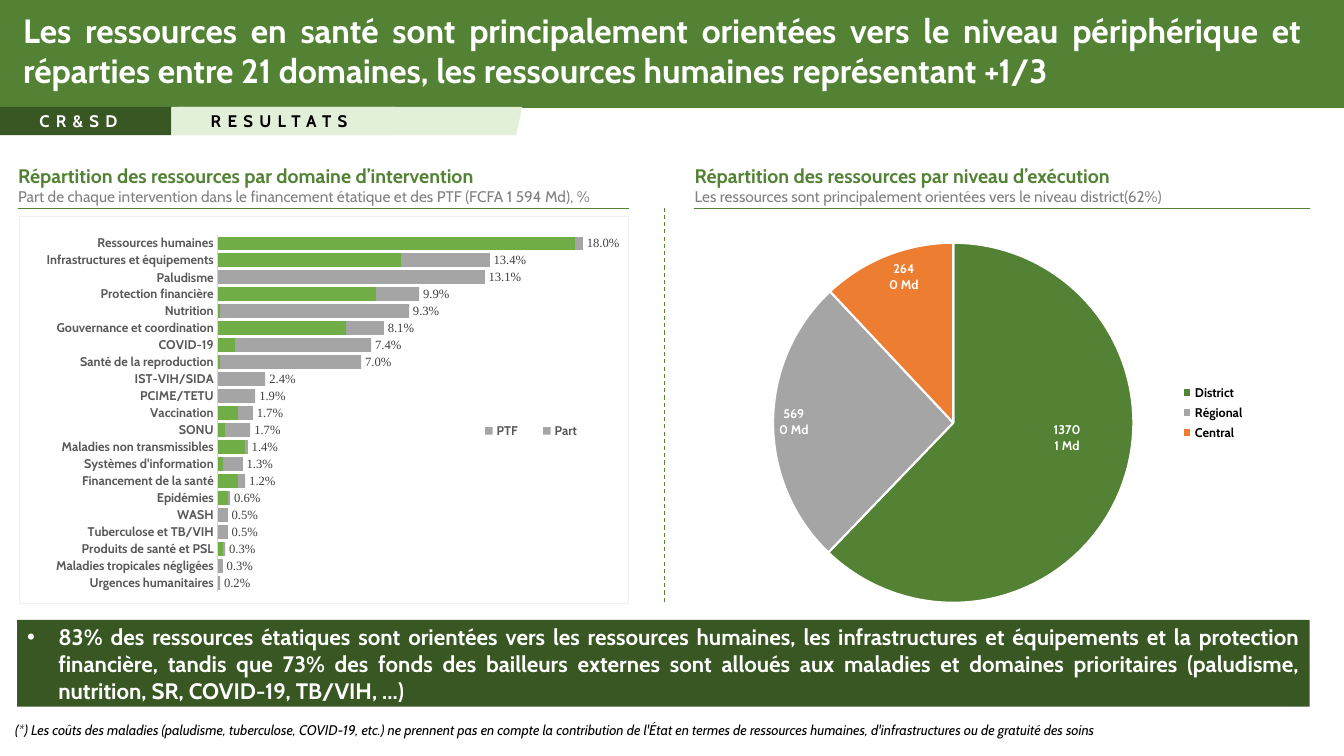
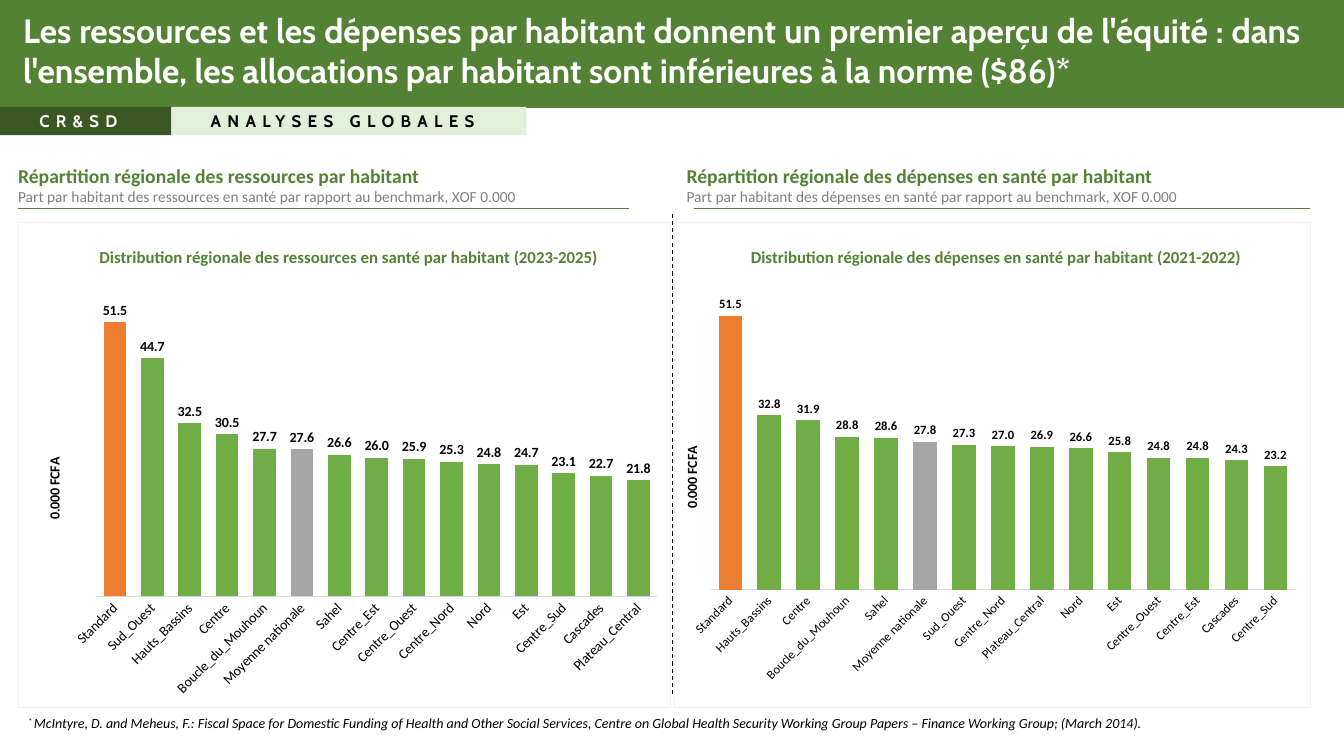
"""Build two slides on the distribution of health resources."""
from copy import deepcopy

from pptx import Presentation, util as u
from pptx.chart.data import CategoryChartData
from pptx.dml.color import RGBColor
from pptx.enum import chart as ch, dml, shapes, text
from pptx.oxml import parse_xml
from pptx.oxml.ns import nsdecls, qn
from pptx.oxml.xmlchemy import OxmlElement

W, H = 13.33, 7.5
LEFT, RIGHT = 0.18, 12.99
RULE_Y, HEAD_Y, TAB_Y, TAB_H = 2.07, 1.62, 1.06, 0.28
COLUMNS = ((LEFT, 6.24), (6.88, RIGHT))
MD = 10 ** 9
C = dict(green="548235", dark="385723", pale="E2F0D9", leaf="70AD47", grey="A5A5A5",
         mean="A6A6A6", orange="ED7D31", muted="808080", label="595959", value="404040",
         axis="D9D9D9", border="F2F2F2", white="FFFFFF", black="000000")

DOMAINS = [
    ("Ressources humaines", 142, 3, 0.18), ("Infrastructures et équipements", 73, 35, 0.134),
    ("Paludisme", 0, 106, 0.131), ("Protection financière", 63, 17, 0.099),
    ("Nutrition", 1, 75, 0.093), ("Gouvernance et coordination", 51, 15, 0.081),
    ("COVID-19", 7, 54, 0.074), ("Santé de la reproduction", 1, 56, 0.07),
    ("IST-VIH/SIDA", 0, 19, 0.024), ("PCIME/TETU", 0, 15, 0.019),
    ("Vaccination", 8, 6, 0.017), ("SONU", 3, 10, 0.017),
    ("Maladies non transmissibles", 11, 1, 0.014), ("Systèmes d'information", 2, 8, 0.013),
    ("Financement de la santé", 8, 3, 0.012), ("Epidémies", 4, 1, 0.006),
    ("WASH", None, 4, 0.005), ("Tuberculose et TB/VIH", 0, 4, 0.005),
    ("Produits de santé et PSL", 2, 1, 0.003),
    ("Maladies tropicales négligées", None, 2, 0.003), ("Urgences humanitaires", None, 1, 0.002)]
RESOURCES = {
    "Standard": 51.5, "Sud_Ouest": 44.7, "Hauts_Bassins": 32.5, "Centre": 30.5,
    "Boucle_du_Mouhoun": 27.7, "Moyenne nationale": 27.6, "Sahel": 26.6, "Centre_Est": 26,
    "Centre_Ouest": 25.9, "Centre_Nord": 25.3, "Nord": 24.8, "Est": 24.7, "Centre_Sud": 23.1,
    "Cascades": 22.7, "Plateau_Central": 21.8}
SPENDING = {
    "Standard": 51.5, "Hauts_Bassins": 32.8, "Centre": 31.9, "Boucle_du_Mouhoun": 28.8,
    "Sahel": 28.6, "Moyenne nationale": 27.8, "Sud_Ouest": 27.3, "Centre_Nord": 27,
    "Plateau_Central": 26.9, "Nord": 26.6, "Est": 25.8, "Centre_Ouest": 24.8,
    "Centre_Est": 24.8, "Cascades": 24.3, "Centre_Sud": 23.2}


def inches(*values):
    return [u.Inches(v) for v in values]


def rgb(name):
    return RGBColor.from_string(C[name])


def style(font, size, color="black", name="Cabin", **fmt):
    font.color.rgb = rgb(color)
    for key, value in dict(size=u.Pt(size), name=name, **fmt).items():
        setattr(font, key, value)


def paint(shape, fill):
    shape.shadow.inherit = False
    shape.fill.solid()
    shape.fill.fore_color.rgb = rgb(fill)
    shape.line.fill.background()


def rect(s, x, y, w, h, fill):
    shape = s.shapes.add_shape(shapes.MSO_SHAPE.RECTANGLE, *inches(x, y, w, h))
    paint(shape, fill)
    return shape


def frame(shape, anchor="MIDDLE", margins=(0.1, 0.05, 0.1, 0.05), wrap=True):
    tf = shape.text_frame
    sides = dict(zip(("left", "top", "right", "bottom"), inches(*margins)))
    fmt = {f"margin_{side}": value for side, value in sides.items()}
    fmt.update(word_wrap=wrap, auto_size=text.MSO_AUTO_SIZE.NONE,
               vertical_anchor=text.MSO_ANCHOR[anchor])
    for key, value in fmt.items():
        setattr(tf, key, value)
    return tf


def write(p, words, align="LEFT", **fmt):
    p.alignment = text.PP_ALIGN[align]
    r = p.add_run()
    r.text = words
    style(r.font, **fmt)
    return r


def line(s, x1, y1, x2, y2, color="green", dash=False):
    c = s.shapes.add_connector(shapes.MSO_CONNECTOR.STRAIGHT, *inches(x1, y1, x2, y2))
    c.line.color.rgb = rgb(color)
    c.line.width = u.Pt(0.75)
    if dash:
        c.line.dash_style = dml.MSO_LINE.DASH
    c._element.spPr.append(OxmlElement("a:effectLst"))


def tab(s, x, w, fill, words, color):
    tf = frame(rect(s, x, TAB_Y, w, TAB_H, fill), margins=(0.39, 0.04, 0.39, 0.04), wrap=False)
    r = write(tf.paragraphs[0], words, size=12, color=color, bold=True)
    r._r.get_or_add_rPr().set("spc", "450")


def ribbon(s):
    pts = [(5.18, TAB_Y), (5.12, TAB_Y + TAB_H), (1.7, TAB_Y + TAB_H), (1.76, TAB_Y)]
    pts = [inches(*pt) for pt in pts]
    fb = s.shapes.build_freeform(*pts[0])
    fb.add_line_segments(pts[1:])
    paint(fb.convert_to_shape(), "pale")


def add_band(s):
    band = rect(s, 0, 0, W, 1.07, "green")._element
    band.nvSpPr.cNvPr.set("id", "20")
    s.slide_layout.shapes._spTree.insert(2, band)


def add_slide(prs, title, section, section_w):
    s = prs.slides.add_slide(prs.slide_layouts[5])
    t = s.shapes.title
    t.left, t.top, t.width, t.height = inches(0.13, 0.16, 12.87, 0.67)
    write(frame(t).paragraphs[0], title, align="JUSTIFY", size=24, color="white", bold=True)
    tab(s, 0, 1.7, "dark", "CR&SD", "white")
    if section_w < 3:
        ribbon(s)
    tab(s, 1.7, section_w, "pale", section, "black")
    for x1, x2 in COLUMNS:
        line(s, x1, RULE_Y, x2, RULE_Y)
    return s


def heading(s, x, title, subtitle, font="Cabin"):
    box = s.shapes.add_textbox(*inches(x, HEAD_Y, 6.2, 0.44))
    tf = frame(box, "BOTTOM", (0, 0, 0, 0.02))
    write(tf.paragraphs[0], title, size=14, color="green", name=font, bold=True)
    write(tf.add_paragraph(), subtitle, size=11, color="muted", name=font)


def place(element, x, y, w=None, h=None):
    """Give a chart part a manual layout, as shares of the chart."""
    inner = element.tag == qn("c:plotArea")
    edge = "".join(f'<c:{k}Mode val="edge"/>' for k in "xy")
    size = "".join(f'<c:{k} val="{v}"/>' for k, v in zip("xywh", (x, y, w, h)) if v is not None)
    target = '<c:layoutTarget val="inner"/>' if inner else ""
    new = parse_xml(f'<c:layout {nsdecls("c")}><c:manualLayout>{target}{edge}{size}'
                    '</c:manualLayout></c:layout>')
    old = element.find(qn("c:layout"))
    overlay = element.find(qn("c:overlay"))
    if old is not None:
        element.replace(old, new)
    elif overlay is not None:
        overlay.addprevious(new)
    else:
        element.insert(0, new)


def add_chart(s, kind, at, cats, series, plot, font, size, border=True):
    data = CategoryChartData()
    data.categories = cats
    for name, values in series:
        data.add_series(name, values)
    chart = s.shapes.add_chart(ch.XL_CHART_TYPE[kind], *inches(*at), data).chart
    chart.has_title = chart.has_legend = False
    style(chart.font, size, name=font)
    edge = (f'<a:ln w="9525"><a:solidFill><a:srgbClr val="{C["border"]}"/></a:solidFill></a:ln>'
            if border else "<a:ln><a:noFill/></a:ln>")
    chart._chartSpace.find(qn("c:txPr")).addprevious(parse_xml(
        f'<c:spPr {nsdecls("c", "a")}><a:solidFill><a:srgbClr val="{C["white"]}"/></a:solidFill>'
        f'{edge}</c:spPr>'))
    place(chart._chartSpace.chart.plotArea, *plot)
    return chart


def fill_format(fmt, color):
    fmt.fill.solid()
    fmt.fill.fore_color.rgb = rgb(color)


def add_labels(series, position, number_format, **fmt):
    labels = series.data_labels
    values = dict(show_value=True, position=ch.XL_LABEL_POSITION[position],
                  number_format=number_format, number_format_is_linked=False)
    for key, value in values.items():
        setattr(labels, key, value)
    style(labels.font, **fmt)
    return labels


def add_legend(chart, position, at, color):
    chart.has_legend = True
    chart.legend.position = ch.XL_LEGEND_POSITION[position]
    chart.legend.include_in_layout = False
    style(chart.legend.font, 9, color, bold=True)
    place(chart.legend._element, *at)


def set_axes(chart, maximum, gap, overlap, **fmt):
    plot, cat, val = chart.plots[0], chart.category_axis, chart.value_axis
    plot.gap_width, plot.overlap, plot.vary_by_categories = gap, overlap, False
    cat.major_tick_mark = ch.XL_TICK_MARK.NONE
    cat.format.line.color.rgb = rgb("axis")
    cat.format.line.width = u.Pt(0.75)
    style(cat.tick_labels.font, **fmt)
    val.minimum_scale, val.maximum_scale = 0, maximum
    val.has_major_gridlines = val.visible = False


def domain_chart(s):
    cats, state, donors, share = zip(*reversed(DOMAINS))
    series = [(name, [None if v is None else v * MD for v in values])
              for name, values in (("Etat", state), ("PTF", donors))] + [("Part", share)]
    chart = add_chart(s, "BAR_STACKED", (0.19, 2.14, 6.05, 3.85), cats, series,
                      (0.325, 0.048, 0.662, 0.922), "Times New Roman", 9)
    set_axes(chart, 160 * MD, 26, 100, size=9, color="label", bold=True)
    for ser, color in zip(chart.series, ("leaf", "grey", "grey")):
        fill_format(ser.format, color)
    add_labels(chart.series[2], "INSIDE_BASE", "0.0%", size=9, color="value",
               name="Times New Roman")
    add_legend(chart, "BOTTOM", (0.73, 0.525, 0.22, 0.06), "label")
    chart.legend._element.insert(1, parse_xml(
        f'<c:legendEntry {nsdecls("c")}><c:idx val="2"/><c:delete val="1"/></c:legendEntry>'))


def level_chart(s):
    chart = add_chart(s, "PIE", (6.89, 2.24, 5.68, 3.75), ("District", "Régional", "Central"),
                      [("Ressources", (1370, 569, 264))], (0.117, 0.045, 0.669, 0.953),
                      "Cabin", 9, border=False)
    series = chart.series[0] if hasattr(chart, "series") else chart.plots[0].series[0]
    for i, color in enumerate(("green", "grey", "orange")):
        fmt = series.points[i].format
        fill_format(fmt, color)
        fmt.line.color.rgb = rgb("white")
        fmt.line.width = u.Pt(1.5)
    labels = add_labels(series, "INSIDE_END", '0" Md"', size=9, color="white", bold=True)
    labels.show_percentage = True
    group = labels._element
    separator = OxmlElement("c:separator")
    separator.text = "\n"
    group.find(qn("c:showBubbleSize")).addnext(separator)
    district = parse_xml(
        f'<c:dLbl {nsdecls("c")}><c:idx val="0"/><c:layout><c:manualLayout><c:x val="-0.06"/>'
        '<c:y val="-0.09"/></c:manualLayout></c:layout></c:dLbl>')
    for child in group:
        if child.tag != qn("c:showLeaderLines"):
            district.append(deepcopy(child))
    group.insert(0, district)
    add_legend(chart, "RIGHT", (0.84, 0.41, 0.13, 0.17), "black")


def region_chart(s, x, w, data, title, size, plot, title_x, unit_at):
    chart = add_chart(s, "COLUMN_CLUSTERED", (x, 2.2, w, 4.82), list(data),
                      [("FCFA", list(data.values()))], plot, "Calibri", 10)
    set_axes(chart, 60, 65, -27, size=size, name="Calibri")
    chart.category_axis.tick_labels.font._element.getparent().getparent().getparent().find(
        qn("a:bodyPr")).set("rot", "-2700000")
    series = chart.plots[0].series[0]
    fill_format(series.format, "leaf")
    for name, color in (("Standard", "orange"), ("Moyenne nationale", "mean")):
        fill_format(series.points[list(data).index(name)].format, color)
    add_labels(series, "OUTSIDE_END", "0.0", size=size, name="Calibri", bold=True)
    chart.has_title = chart.value_axis.has_title = True
    for part, words, at, pt, color in (
            (chart.chart_title, title, (title_x, 0.043), 12, "green"),
            (chart.value_axis.axis_title, "0.000 FCFA", unit_at, 10, "black")):
        write(part.text_frame.paragraphs[0], words, "CENTER", size=pt, color=color,
              name="Calibri", bold=True)
        place(part._element, *at)
    body = chart.value_axis.axis_title.text_frame._txBody.find(qn("a:bodyPr"))
    body.set("rot", "-5400000")
    body.set("vert", "horz")


def key_message(s, words):
    p = frame(rect(s, 0.17, 6.15, 12.82, 0.86, "dark")).paragraphs[0]
    pPr = p._p.get_or_add_pPr()
    pPr.set("marL", str(u.Inches(0.31)))
    pPr.set("indent", str(-u.Inches(0.31)))
    pPr.append(parse_xml(f'<a:buFont {nsdecls("a")} typeface="Arial"/>'))
    pPr.append(parse_xml(f'<a:buChar {nsdecls("a")} char="•"/>'))
    write(p, words, "JUSTIFY", size=16, color="white", bold=True)


def footnote(s, x, y, h, words, font, margins, mark=""):
    p = frame(s.shapes.add_textbox(*inches(x, y, 12.82, h)), margins=margins).paragraphs[0]
    if mark:
        r = write(p, mark, size=10, name=font, italic=True)
        r._r.get_or_add_rPr().set("baseline", "30000")
    write(p, words, size=10, name=font, italic=True)


def main():
    prs = Presentation()
    prs.slide_width, prs.slide_height = inches(W, H)

    s = add_slide(prs, "Les ressources en santé sont principalement orientées vers le niveau périphérique et réparties entre 21 domaines, les ressources humaines représentant +1/3", "RESULTATS", 2.22)
    add_band(s)
    heading(s, LEFT, "Répartition des ressources par domaine d’intervention", "Part de chaque intervention dans le financement étatique et des PTF (FCFA 1 594 Md), %")
    heading(s, 6.89, "Répartition des ressources par niveau d’exécution", "Les ressources sont principalement orientées vers le niveau district(62%)")
    line(s, 6.59, 2.06, 6.59, 5.99, dash=True)
    domain_chart(s)
    level_chart(s)
    key_message(s, "83% des ressources étatiques sont orientées vers les ressources humaines, les infrastructures et équipements et la protection financière, tandis que 73% des fonds des bailleurs externes sont alloués aux maladies et domaines prioritaires (paludisme, nutrition, SR, COVID-19, TB/VIH, ...)")
    footnote(s, 0.15, 7.08, 0.32, "(*) Les coûts des maladies (paludisme, tuberculose, COVID-19, etc.) ne prennent pas en compte la contribution de l'État en termes de ressources humaines, d'infrastructures ou de gratuité des soins", "Cabin", (0, 0, 0, 0))

    s = add_slide(prs, "Les ressources et les dépenses par habitant donnent un premier aperçu de l'équité : dans l'ensemble, les allocations par habitant sont inférieures à la norme ($86)*", "ANALYSES GLOBALES", 3.52)
    heading(s, LEFT, "Répartition régionale des ressources par habitant", "Part par habitant des ressources en santé par rapport au benchmark, XOF 0.000", "Calibri")
    heading(s, 6.81, "Répartition régionale des dépenses en santé par habitant", "Part par habitant des dépenses en santé par rapport au benchmark, XOF 0.000", "Calibri")
    region_chart(s, LEFT, 6.48, RESOURCES, "Distribution régionale des ressources en santé par habitant (2023-2025)", 10, (0.119, 0.113, 0.86, 0.659), 0.119, (0.037, 0.48))
    region_chart(s, 6.68, 6.32, SPENDING, "Distribution régionale des dépenses en santé par habitant (2021-2022)", 9, (0.058, 0.1, 0.918, 0.658), 0.116, (0.01, 0.457))
    line(s, 6.67, 2.12, 6.67, 6.92, "black", dash=True)
    footnote(s, LEFT, 7.04, 0.27, "McIntyre, D. and Meheus, F.: Fiscal Space for Domestic Funding of Health and Other Social Services, Centre on Global Health Security Working Group Papers – Finance Working Group; (March 2014).", "Calibri", (0.1, 0.05, 0.1, 0.05), "* ")
    prs.save("out.pptx")


if __name__ == "__main__":
    main()
